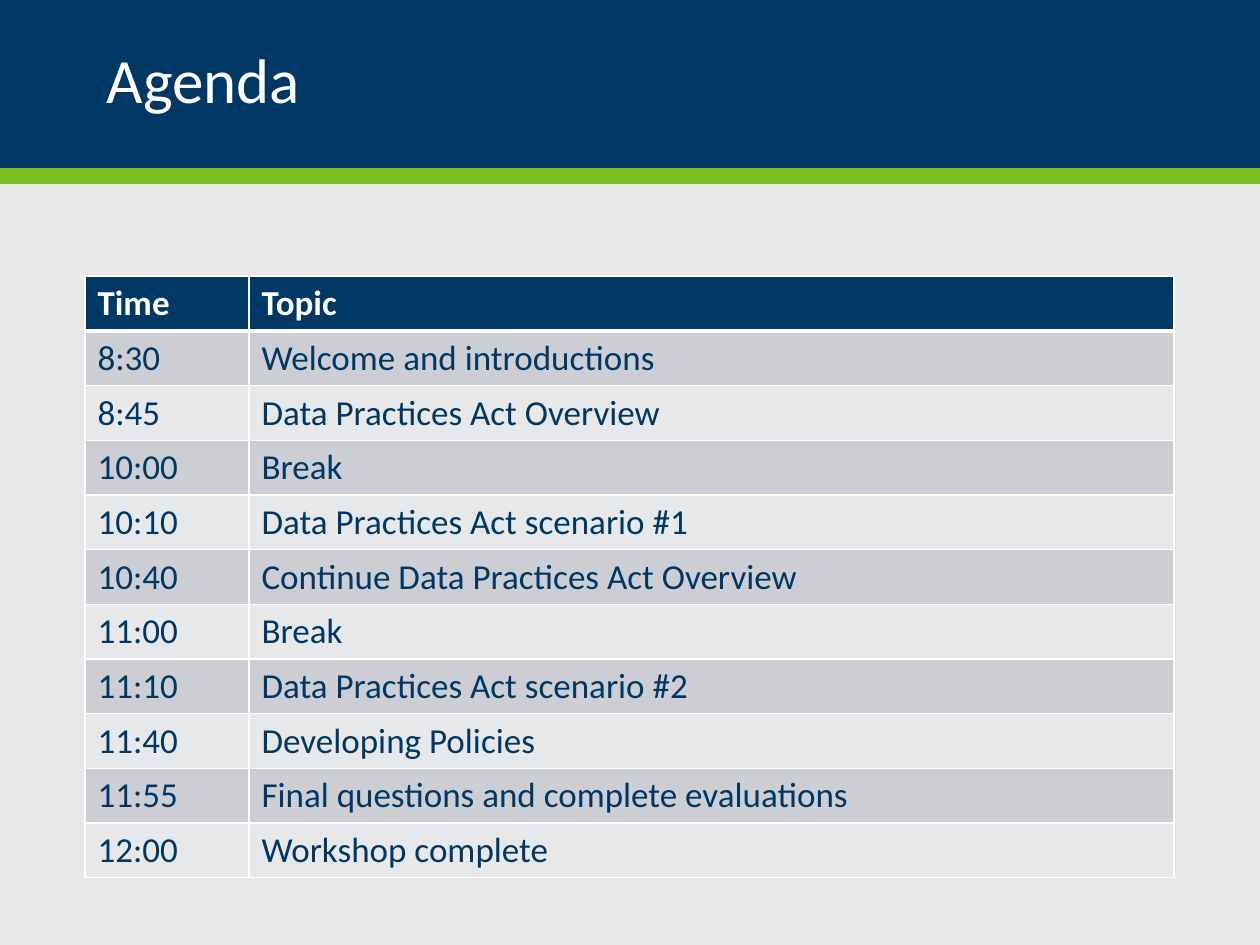
import pptx
import pptx.util
import pptx.dml.color
import pptx.enum.shapes
import pptx.enum.text
import lxml.etree

PX = 914400 // 126
NAVY, GREEN, WHITE = "003865", "78BE21", "FFFFFF"
BANDS = ["E7E8EA", "CCCED3"]
AGENDA = [
    ("Time", "Topic"),
    ("8:30", "Welcome and introductions"),
    ("8:45", "Data Practices Act Overview"),
    ("10:00", "Break"),
    ("10:10", "Data Practices Act scenario #1"),
    ("10:40", "Continue Data Practices Act Overview"),
    ("11:00", "Break"),
    ("11:10", "Data Practices Act scenario #2"),
    ("11:40", "Developing Policies"),
    ("11:55", "Final questions and complete evaluations"),
    ("12:00", "Workshop complete"),
]


def paint(fill, color):
    """Make a fill solid in a hex colour."""
    fill.solid()
    fill.fore_color.rgb = pptx.dml.color.RGBColor.from_string(color)


def write(frame, text, color, **format):
    """Put one run of text into a frame, with font values by name."""
    run = frame.paragraphs[0].add_run()
    run.text = text
    paint(run.font.fill, color)
    for name, value in {"name": "Calibri", **format}.items():
        setattr(run.font, name, value)


deck = pptx.Presentation()
deck.slide_width, deck.slide_height = 1260 * PX, 945 * PX
slide = deck.slides.add_slide(deck.slide_layouts[6])
paint(slide.background.fill, "E8E8E8")

# Header bands
for top, high, color in [(0, 168, NAVY), (168, 16, GREEN)]:
    band = slide.shapes.add_shape(
        pptx.enum.shapes.MSO_SHAPE.RECTANGLE, 0, top * PX, 1260 * PX, high * PX)
    band.shadow.inherit = False
    band.line.fill.background()
    paint(band.fill, color)

# Title
frame = slide.shapes.add_textbox(0, 0, 1260 * PX, 166 * PX).text_frame
for name, value in {
    "word_wrap": True,
    "margin_left": 107 * PX,
    "vertical_anchor": pptx.enum.text.MSO_ANCHOR.MIDDLE,
}.items():
    setattr(frame, name, value)
frame.paragraphs[0].line_spacing = 0.9
write(frame, "Agenda", WHITE, size=pptx.util.Pt(36))

# Agenda table
table = slide.shapes.add_table(
    len(AGENDA), 2, 85 * PX, 276 * PX, 1089 * PX, 585 * PX).table
for col, wide in zip(table.columns, [164, 925]):
    col.width = wide * PX

for r, line in enumerate(AGENDA):
    head = r == 0
    table.rows[r].height = (55 if head else 53) * PX
    for c, text in enumerate(line):
        cell = table.cell(r, c)
        props = cell._tc.get_or_add_tcPr()
        for side in "LRTB":
            thick = (r, side) in [(0, "B"), (1, "T")]
            edge = lxml.etree.SubElement(
                props, pptx.oxml.ns.qn(f"a:ln{side}"),
                w=str(pptx.util.Pt(3 if thick else 1)))
            solid = lxml.etree.SubElement(edge, pptx.oxml.ns.qn("a:solidFill"))
            lxml.etree.SubElement(
                solid, pptx.oxml.ns.qn("a:srgbClr"), val=WHITE)
        paint(cell.fill, NAVY if head else BANDS[r % 2])
        write(cell.text_frame, text, WHITE if head else NAVY,
              size=pptx.util.Pt(20), bold=head)

deck.save("out.pptx")
